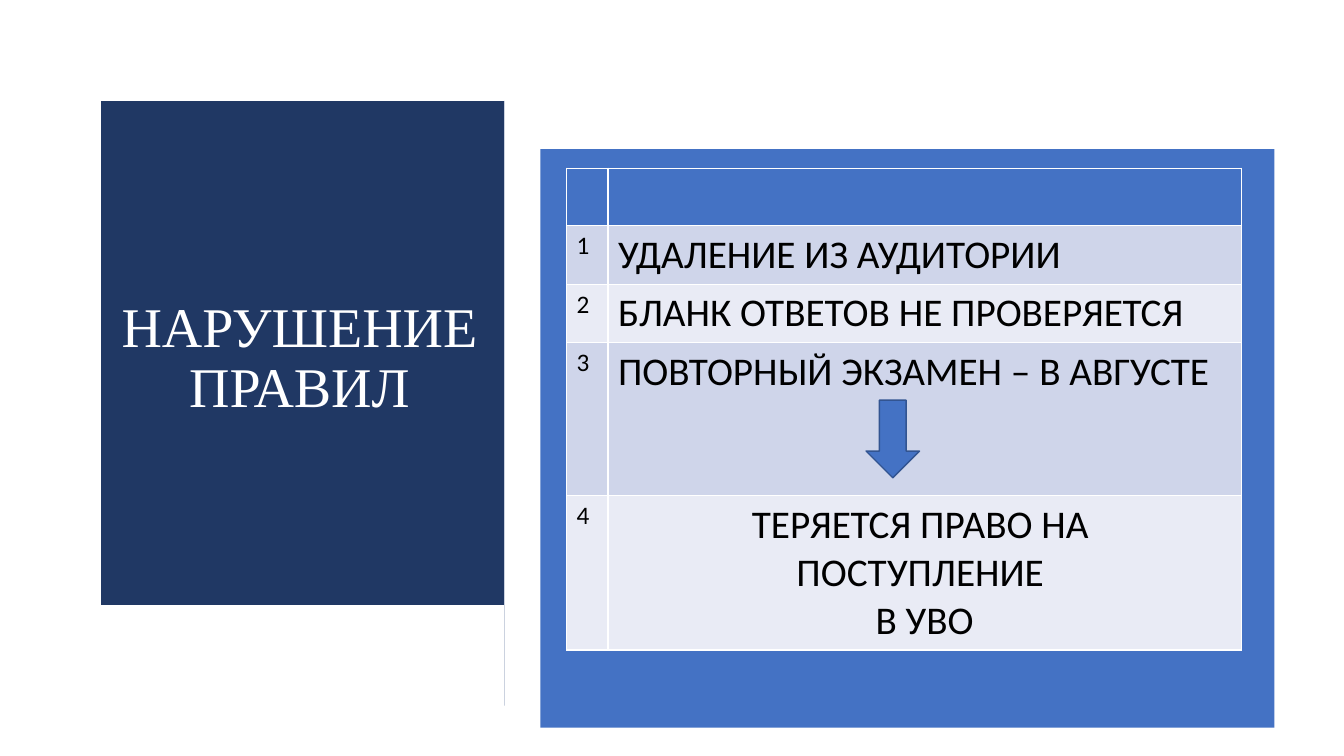
import pptx
import pptx.util
import pptx.dml.color
import pptx.enum.shapes
import pptx.enum.text

Inches = pptx.util.Inches
Pt = pptx.util.Pt
ALIGN = pptx.enum.text.PP_ALIGN
SHAPES = pptx.enum.shapes.MSO_SHAPE


def color(hex_value):
    return pptx.dml.color.RGBColor.from_string(hex_value)


def apply(target, formats):
    for name, value in formats.items():
        setattr(target, name, value)


class SlideBuilder:
    NAVY, FOLD, BLUE, OUTLINE = "203864", "2F5597", "4472C4", "325491"
    BANDS = ("E9EBF5", "CFD5EA")
    WHITE, BLACK = "FFFFFF", "000000"

    def __init__(self, slide):
        self.slide = slide

    def paint(self, shape, fill, outline=None):
        shape.shadow.inherit = False
        shape.fill.solid()
        shape.fill.fore_color.rgb = color(fill)
        if outline:
            shape.line.color.rgb = color(outline)
            shape.line.width = Pt(1)
        else:
            shape.line.fill.background()

    def set_text(self, frame, lines, font, size, ink, **paragraph_format):
        frame.text = "\n".join(lines)
        for paragraph in frame.paragraphs:
            apply(paragraph, paragraph_format)
            for run in paragraph.runs:
                apply(run.font, {"name": font, "size": Pt(size)})
                run.font.color.rgb = color(ink)

    def panel(self, corners, fill):
        outline = self.slide.shapes.build_freeform(*corners[0], scale=Inches(1))
        outline.add_line_segments(corners[1:], close=True)
        self.paint(outline.convert_to_shape(), fill)

    def preset(self, kind, box, fill, outline=None):
        shape = self.slide.shapes.add_shape(kind, *map(Inches, box))
        self.paint(shape, fill, outline)

    def title(self, text, box):
        heading = self.slide.shapes.title
        # Bring the heading in front of the panels drawn so far
        heading.element.getparent().append(heading.element)
        apply(heading, dict(zip(("left", "top", "width", "height"), map(Inches, box))))
        apply(heading.text_frame, {
            "word_wrap": True,
            "auto_size": pptx.enum.text.MSO_AUTO_SIZE.NONE,
            "vertical_anchor": pptx.enum.text.MSO_ANCHOR.MIDDLE,
        })
        self.set_text(heading.text_frame, [text], "Times New Roman", 40, self.WHITE,
                      alignment=ALIGN.CENTER, line_spacing=0.9)

    def numbered_table(self, items, box, widths, heights):
        table = self.slide.shapes.add_table(
            len(heights), len(widths), *map(Inches, box)).table
        for column, width in zip(table.columns, widths):
            column.width = Inches(width)
        for row, height in zip(table.rows, heights):
            row.height = Inches(height)
        for number, row in enumerate(table.rows):
            for cell in row.cells:
                cell.fill.solid()
                cell.fill.fore_color.rgb = color(
                    self.BANDS[number % 2] if number else self.BLUE)
        for number, lines in enumerate(items, 1):
            align = ALIGN.CENTER if len(lines) > 1 else ALIGN.LEFT
            self.set_text(table.cell(number, 0).text_frame, [str(number)],
                          "Calibri", 18, self.BLACK)
            self.set_text(table.cell(number, 1).text_frame, lines,
                          "Calibri", 28, self.BLACK, alignment=align)


def main():
    deck = pptx.Presentation()
    apply(deck, {"slide_width": Inches(13.33), "slide_height": Inches(7.5)})
    builder = SlideBuilder(deck.slides.add_slide(deck.slide_layouts[5]))

    # Folded ribbon with the heading
    builder.panel([(5.36, 7.23), (4.53, 6.72), (4.53, 0.99), (5.36, 1.5)], builder.FOLD)
    builder.panel([(5.06, 6.44), (4.53, 6.73), (4.53, 0.98), (5.06, 0.69)], builder.NAVY)
    builder.panel([(0.69, 0.7), (5.07, 0.7), (5.07, 6.45), (0.69, 6.45)], builder.NAVY)
    builder.title("НАРУШЕНИЕ ПРАВИЛ", (1.02, 1.07, 3.9, 4.99))

    # Consequences on the blue panel
    builder.preset(SHAPES.RECTANGLE, (5.36, 1.48, 7.28, 5.74), builder.BLUE)
    consequences = [
        ["УДАЛЕНИЕ ИЗ АУДИТОРИИ"],
        ["БЛАНК ОТВЕТОВ НЕ ПРОВЕРЯЕТСЯ"],
        ["ПОВТОРНЫЙ ЭКЗАМЕН – В АВГУСТЕ"],
        ["ТЕРЯЕТСЯ ПРАВО НА ", "ПОСТУПЛЕНИЕ ", "В УВО"],
    ]
    builder.numbered_table(consequences, (5.62, 1.67, 6.69, 4.78),
                           widths=(0.41, 6.28),
                           heights=(0.57, 0.58, 0.58, 1.52, 1.53))

    # Arrow from the repeat exam to its outcome
    builder.preset(SHAPES.DOWN_ARROW, (8.59, 3.97, 0.53, 0.77),
                   builder.BLUE, builder.OUTLINE)

    deck.save("out.pptx")


if __name__ == "__main__":
    main()
